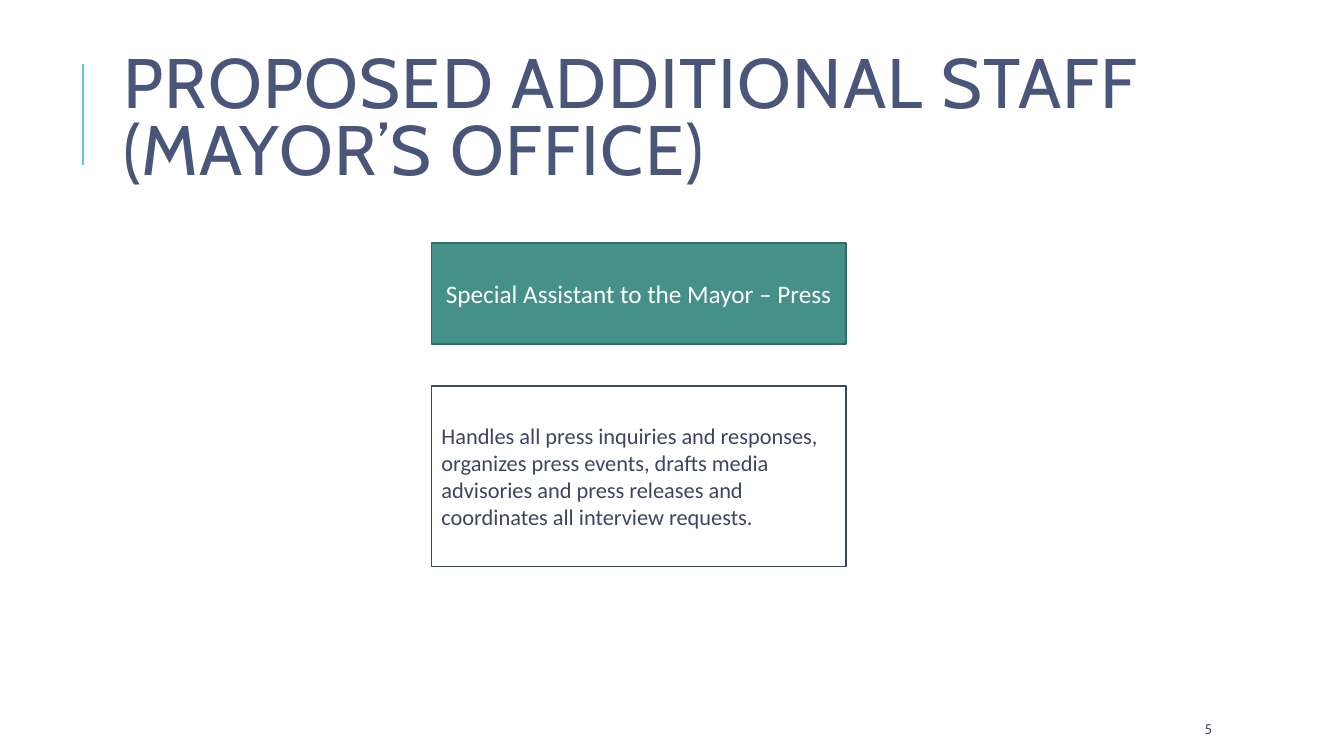
from pptx import Presentation
from pptx import util as u
from pptx.dml.color import RGBColor
from pptx.enum import shapes, text
from pptx.oxml.ns import qn

PX = 9144
NAVY, INK, WHITE = "495579", "3C4663", "FFFFFF"


def px(*nums):
    """Turn px lengths into EMU."""
    return [u.Emu(n * PX) for n in nums]


def paint(color, code):
    """Set a solid colour from a hex string."""
    color.rgb = RGBColor.from_string(code)


def write(shape, words, size, face, code, align=text.PP_ALIGN.LEFT):
    """Write one middle-anchored paragraph and return its run."""
    frame = shape.text_frame
    frame.word_wrap = True
    frame.auto_size = text.MSO_AUTO_SIZE.NONE
    frame.vertical_anchor = text.MSO_ANCHOR.MIDDLE
    para = frame.paragraphs[0]
    para.alignment = align
    run = para.add_run()
    run.text = words
    run.font.size, run.font.name = u.Pt(size), face
    paint(run.font.color, code)
    return run


def head(slide, box, words):
    """Place the title in its box, with the accent line to its left."""
    x, y, w, h = box
    rule = slide.shapes.add_connector(
        shapes.MSO_CONNECTOR.STRAIGHT, *px(x - 30, y + 125, x - 30, y + 25))
    paint(rule.line.color, "62C7CD")
    rule.line.width = u.Pt(1.5)
    props = rule._element.spPr
    props.append(props.makeelement(qn("a:effectLst"), {}))
    title = slide.shapes.title
    title.left, title.top, title.width, title.height = px(*box)
    run = write(title, words, 50, "Cabin", NAVY)
    title.text_frame.paragraphs[0].line_spacing = 0.8
    run.font._element.set("spc", "100")


def panel(slide, box, fill, edge):
    """Draw one outlined rectangle."""
    card = slide.shapes.add_shape(shapes.MSO_SHAPE.RECTANGLE, *px(*box))
    card.shadow.inherit = False
    card.fill.solid()
    paint(card.fill.fore_color, fill)
    paint(card.line.color, edge)
    card.line.width = u.Pt(1.25)
    return card


def role(slide, box, name, duty):
    """Stack a role name above its duties in the given box."""
    x, y, w, h = box
    top, gap = 100, 42
    card = panel(slide, (x, y, w, top), "459088", "336B65")
    write(card, name, 18, "Calibri", WHITE, text.PP_ALIGN.CENTER)
    card = panel(slide, (x, y + top + gap, w, h - top - gap), WHITE, INK)
    write(card, duty, 16, "Calibri", INK)


def foot(slide, box, num):
    """Write the page number."""
    write(slide.shapes.add_textbox(*px(*box)), num, 10, "Cabin", NAVY)


def main():
    """Build and save the slide."""
    deck = Presentation()
    deck.slide_width, deck.slide_height = px(1333, 750)
    slide = deck.slides.add_slide(deck.slide_layouts[5])
    slide.background.fill.solid()
    paint(slide.background.fill.fore_color, WHITE)
    head(slide, (112, 39, 1063, 164),
         "PROPOSED ADDITIONAL STAFF (MAYOR’S OFFICE)")
    foot(slide, (1185, 708, 106, 30), "5")
    role(slide, (428, 241, 411, 321),
         "Special Assistant to the Mayor – Press",
         "Handles all press inquiries and responses, organizes press events, "
         "drafts media advisories and press releases and coordinates all "
         "interview requests.")
    deck.save("out.pptx")


if __name__ == "__main__":
    main()
